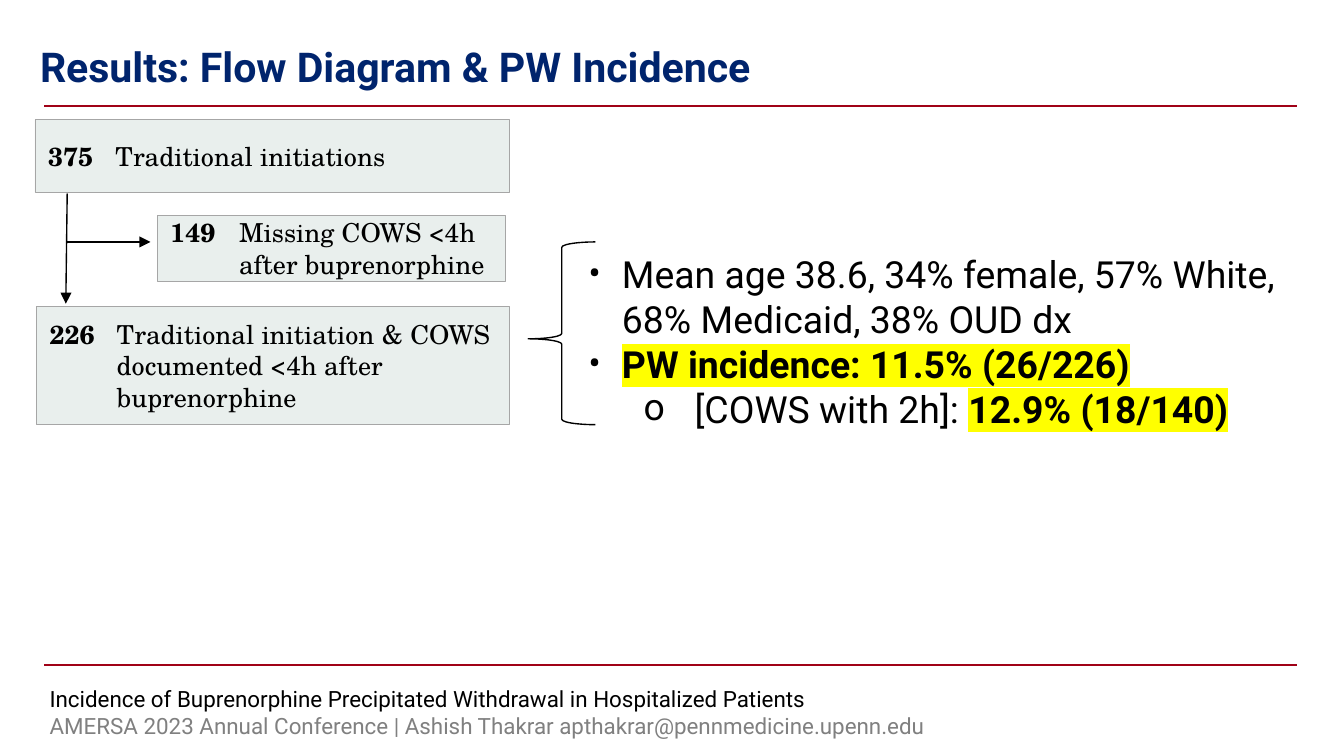
from lxml import etree
from pptx import Presentation
from pptx import util as u
from pptx.dml.color import RGBColor
from pptx.enum import shapes, text
from pptx.oxml import ns

NAVY = RGBColor(0x00, 0x24, 0x6D)
RED = RGBColor(0xA0, 0x01, 0x17)
BLACK = RGBColor(0, 0, 0)
GRAY = RGBColor(0x80, 0x80, 0x80)
BOX_FILL = RGBColor(0xE9, 0xEF, 0xED)
BOX_LINE = RGBColor(0xA6, 0xA6, 0xA6)
YELLOW = RGBColor(0xFF, 0xFF, 0x00)

TITLE_FORMAT = {"name": "Roboto", "size": u.Pt(22), "bold": True}
FOOTER_FORMAT = {"name": "Roboto", "size": u.Pt(12)}
BOX_FORMAT = {"name": "TeX Gyre Schola", "size": u.Pt(14)}
FINDING_FORMAT = {"name": "Roboto", "size": u.Pt(20)}

TITLE = "Results: Flow Diagram & PW Incidence"
FOOTER = [
    ("Incidence of Buprenorphine Precipitated Withdrawal in Hospitalized Patients", BLACK),
    ("AMERSA 2023 Annual Conference | Ashish Thakrar apthakrar@pennmedicine.upenn.edu", GRAY),
]
# Count, label, hanging indent, (left, top, width, height)
FLOW_BOXES = [
    ("375", "Traditional initiations", 0.5, (0.26, 0.89, 3.53, 0.54)),
    ("149", "Missing COWS <4h after buprenorphine", 0.51, (1.17, 1.6, 2.59, 0.49)),
    ("226", "Traditional initiation & COWS documented <4h after buprenorphine",
     0.5, (0.27, 2.28, 3.52, 0.88)),
]
# Level, bullet, left margin, hanging indent, [(words, highlighted)]
FINDINGS = [
    (0, "•", 0.25, 0.25, [("Mean age 38.6, 34% female, 57% White, 68% Medicaid, 38% OUD dx", False)]),
    (0, "•", 0.25, 0.25, [("PW incidence: 11.5% (26/226)", True)]),
    (1, "o", 0.79, 0.38, [("[COWS with 2h]: ", False), ("12.9% (18/140)", True)]),
]
RULE_TOPS = (0.79, 4.95)
FLOW_ARROWS = [(0.5, 1.8, 1.12, 1.8), (0.5, 1.44, 0.49, 2.26)]


def add_run(paragraph, words, font_format, color=BLACK, **extra):
    run = paragraph.add_run()
    run.text = words
    for name, value in {**font_format, **extra}.items():
        setattr(run.font, name, value)
    run.font.color.rgb = color
    return run


def highlight(run, color):
    mark = etree.Element(ns.qn("a:highlight"))
    etree.SubElement(mark, ns.qn("a:srgbClr"), val=str(color))
    run._r.get_or_add_rPr().find(ns.qn("a:solidFill")).addnext(mark)


def hang(paragraph, margin, indent):
    properties = paragraph._p.get_or_add_pPr()
    properties.set("marL", str(u.Inches(margin)))
    properties.set("indent", str(-u.Inches(indent)))
    return properties


def add_text_box(slide, place, **frame_format):
    frame = slide.shapes.add_textbox(*map(u.Inches, place)).text_frame
    for name, value in {"word_wrap": True, **frame_format}.items():
        setattr(frame, name, value)
    return frame


def next_paragraph(frame, index):
    return frame.add_paragraph() if index else frame.paragraphs[0]


def add_line(slide, ends, color, width, arrow=False):
    line = slide.shapes.add_connector(shapes.MSO_CONNECTOR.STRAIGHT, *map(u.Inches, ends))
    line.line.color.rgb = color
    line.line.width = u.Pt(width)
    if arrow:
        etree.SubElement(line.line._get_or_add_ln(), ns.qn("a:tailEnd"), type="triangle")
    etree.SubElement(line._element.spPr, ns.qn("a:effectLst"))


def add_flow_box(slide, count, label, indent, place):
    box = slide.shapes.add_shape(shapes.MSO_SHAPE.RECTANGLE, *map(u.Inches, place))
    box.shadow.inherit = False
    box.fill.solid()
    box.fill.fore_color.rgb = BOX_FILL
    box.line.color.rgb = BOX_LINE
    box.line.width = u.Pt(0.25)
    box.text_frame.vertical_anchor = text.MSO_ANCHOR.MIDDLE
    paragraph = box.text_frame.paragraphs[0]
    paragraph.alignment = text.PP_ALIGN.LEFT
    hang(paragraph, indent, indent)
    add_run(paragraph, count, BOX_FORMAT, bold=True)
    add_run(paragraph, "\t" + label, BOX_FORMAT, bold=False)


def add_brace(slide):
    brace = slide.shapes.add_shape(
        shapes.MSO_SHAPE.RIGHT_BRACE, *map(u.Inches, (3.93, 1.8, 0.5, 1.36)))
    brace.shadow.inherit = False
    brace.rotation = 180
    brace.adjustments[0], brace.adjustments[1] = 0.08, 0.47
    brace.fill.background()
    brace.line.color.rgb = BLACK
    brace.line.width = u.Pt(0.75)


def add_findings(slide):
    frame = add_text_box(slide, (4.28, 1.82, 5.36, 1.75))
    for index, (level, bullet, margin, indent, runs) in enumerate(FINDINGS):
        paragraph = next_paragraph(frame, index)
        paragraph.level = level
        properties = hang(paragraph, margin, indent)
        etree.SubElement(properties, ns.qn("a:buFont"), typeface=FINDING_FORMAT["name"])
        etree.SubElement(properties, ns.qn("a:buChar"), char=bullet)
        for words, marked in runs:
            run = add_run(paragraph, words, FINDING_FORMAT, bold=marked)
            if marked:
                highlight(run, YELLOW)


def main():
    presentation = Presentation()
    presentation.slide_width = u.Inches(10)
    presentation.slide_height = presentation.slide_width * 9 // 16
    slide = presentation.slides.add_slide(presentation.slide_layouts[6])

    for top in RULE_TOPS:
        add_line(slide, (0.33, top, 9.65, top), RED, 1)

    footer = add_text_box(slide, (0.27, 5.05, 7.45, 0.5))
    for index, (words, color) in enumerate(FOOTER):
        add_run(next_paragraph(footer, index), words, FOOTER_FORMAT, color)

    inset = u.Inches(0.1)
    title = add_text_box(slide, (0.2, 0.33, 7.4, 0.33), margin_top=inset,
                         margin_bottom=inset, vertical_anchor=text.MSO_ANCHOR.MIDDLE)
    add_run(title.paragraphs[0], TITLE, TITLE_FORMAT, NAVY)

    for flow_box in FLOW_BOXES:
        add_flow_box(slide, *flow_box)
    for ends in FLOW_ARROWS:
        add_line(slide, ends, BLACK, 0.75, arrow=True)
    add_brace(slide)
    add_findings(slide)
    presentation.save("out.pptx")


if __name__ == "__main__":
    main()
